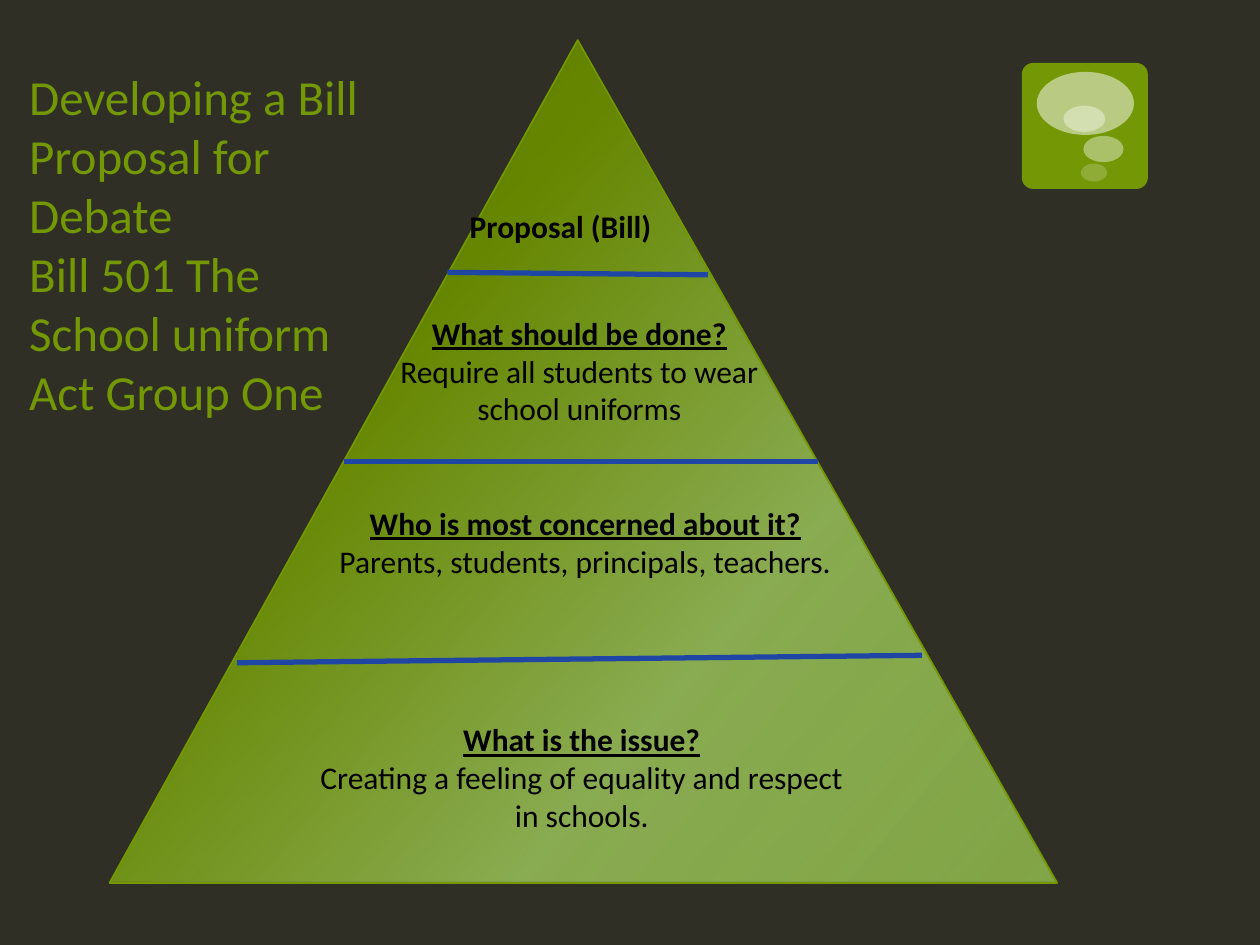
from lxml import etree
from pptx import Presentation
from pptx.dml.color import RGBColor
from pptx.enum.shapes import MSO_CONNECTOR, MSO_SHAPE
from pptx.enum.text import MSO_ANCHOR, MSO_AUTO_SIZE, PP_ALIGN
from pptx.oxml.ns import qn
from pptx.util import Cm, Pt

ROUNDED = MSO_SHAPE.ROUNDED_RECTANGLE
OVAL = MSO_SHAPE.OVAL
TRIANGLE = MSO_SHAPE.ISOSCELES_TRIANGLE
STRAIGHT = MSO_CONNECTOR.STRAIGHT
BOTTOM = MSO_ANCHOR.BOTTOM
FIT_SHAPE = MSO_AUTO_SIZE.SHAPE_TO_FIT_TEXT
LEFT, CENTER = PP_ALIGN.LEFT, PP_ALIGN.CENTER

FONT = "Calibri"
BACKGROUND = RGBColor(0x2F, 0x2F, 0x26)
GREEN = RGBColor(0x74, 0x98, 0x05)
OUTLINE = RGBColor(0x73, 0x98, 0x01)
BLUE = RGBColor(0x20, 0x46, 0xA5)
WHITE = RGBColor(0xFF, 0xFF, 0xFF)
BLACK = RGBColor(0x00, 0x00, 0x00)

GRADIENT_ANGLE = 220
GRADIENT_STOPS = [
    (0, RGBColor(0x8F, 0xB8, 0x4C), 85),
    (33, RGBColor(0x8E, 0xB1, 0x53), 95),
    (67, RGBColor(0x66, 0x86, 0x00), 100),
    (100, RGBColor(0x58, 0x74, 0x00), 100),
]

TITLE = "Developing a Bill Proposal for Debate\vBill 501 The School uniform Act Group One"

BUBBLES = [
    ((20.9, 1.45, 1.96, 1.27), 50),
    ((21.84, 2.74, 0.81, 0.53), 40),
    ((21.79, 3.3, 0.53, 0.36), 20),
    ((21.44, 2.13, 0.84, 0.53), 38),
]

QUESTIONS = [
    ((5.94, 14.4, 11.58, 2.57), "What is the issue?",
     "Creating a feeling of equality and respect in schools."),
    ((6.3, 10.03, 11, 2.57), "Who is most concerned about it?",
     "Parents, students, principals, teachers."),
    ((7.77, 6.2, 7.82, 2.57), "What should be done?",
     "Require all students to wear school uniforms"),
]

DIVIDERS = [
    (9.02, 5.49, 14.27, 5.54),
    (6.93, 9.3, 16.48, 9.3),
    (4.78, 13.36, 18.59, 13.21),
]


def lengths(values):
    return [Cm(value) for value in values]


def set_alpha(color_element, percent):
    etree.SubElement(color_element, qn("a:alpha")).set("val", str(percent * 1000))


def add_plain_shape(page, preset, place, color, opacity=100):
    shape = page.shapes.add_shape(preset, *lengths(place))
    shape.shadow.inherit = False
    shape.fill.solid()
    shape.fill.fore_color.rgb = color
    shape.line.fill.background()
    if opacity < 100:
        set_alpha(shape.fill._xPr.find(".//" + qn("a:srgbClr")), opacity)
    return shape


def add_icon(page):
    tile = add_plain_shape(page, ROUNDED, (20.6, 1.27, 2.54, 2.54), GREEN)
    tile.adjustments[0] = 0.09
    for place, opacity in BUBBLES:
        add_plain_shape(page, OVAL, place, WHITE, opacity)


def add_pyramid(page):
    pyramid = add_plain_shape(page, TRIANGLE, (2.21, 0.81, 19.1, 16.99), GREEN)
    pyramid.adjustments[0] = 0.494
    pyramid.line.color.rgb = OUTLINE
    pyramid.line.width = Pt(1)
    pyramid.fill.gradient()
    gradient = pyramid.fill._xPr.find(qn("a:gradFill"))
    stops = gradient.find(qn("a:gsLst"))
    for stop in list(stops):
        stops.remove(stop)
    for position, color, opacity in GRADIENT_STOPS:
        stop = etree.SubElement(stops, qn("a:gs"))
        stop.set("pos", str(position * 1000))
        color_element = etree.SubElement(stop, qn("a:srgbClr"))
        color_element.set("val", str(color))
        set_alpha(color_element, opacity)
    direction = gradient.find(qn("a:lin"))
    direction.set("ang", str(GRADIENT_ANGLE * 60000))
    direction.set("scaled", "0")


def add_text(page, place, lines, size, color, align):
    box = page.shapes.add_textbox(*lengths(place))
    frame = box.text_frame
    frame.word_wrap = True
    frame.text = "\n".join(lines)
    for para in frame.paragraphs:
        para.alignment = align
        for span in para.runs:
            span.font.name = FONT
            span.font.size = Pt(size)
            span.font.color.rgb = color
    return frame


def add_title(page):
    frame = add_text(page, (0.46, 3.89, 7.57, 4.7), [TITLE], 28, GREEN, LEFT)
    frame.vertical_anchor = BOTTOM
    frame.margin_left = Cm(0.13)


def add_label(page, place, lines, align, underline):
    frame = add_text(page, place, lines, 18, BLACK, align)
    frame.auto_size = FIT_SHAPE
    heading = frame.paragraphs[0].runs[0].font
    heading.bold = True
    heading.underline = underline


def add_divider(page, ends):
    divider = page.shapes.add_connector(STRAIGHT, *lengths(ends))
    divider.line.color.rgb = BLUE
    divider.line.width = Pt(3)
    etree.SubElement(divider._element.spPr, qn("a:effectLst"))


def main():
    deck = Presentation()
    deck.slide_width, deck.slide_height = Cm(25.4), Cm(19.05)
    page = deck.slides.add_slide(deck.slide_layouts[6])
    page.background.fill.solid()
    page.background.fill.fore_color.rgb = BACKGROUND
    add_icon(page)
    add_title(page)
    add_pyramid(page)
    for place, question, answer in QUESTIONS:
        add_label(page, place, [question, answer], CENTER, True)
    add_label(page, (9.22, 4.04, 5.59, 1.02), ["Proposal (Bill)"], LEFT, False)
    for ends in DIVIDERS:
        add_divider(page, ends)
    deck.save("out.pptx")


if __name__ == "__main__":
    main()
